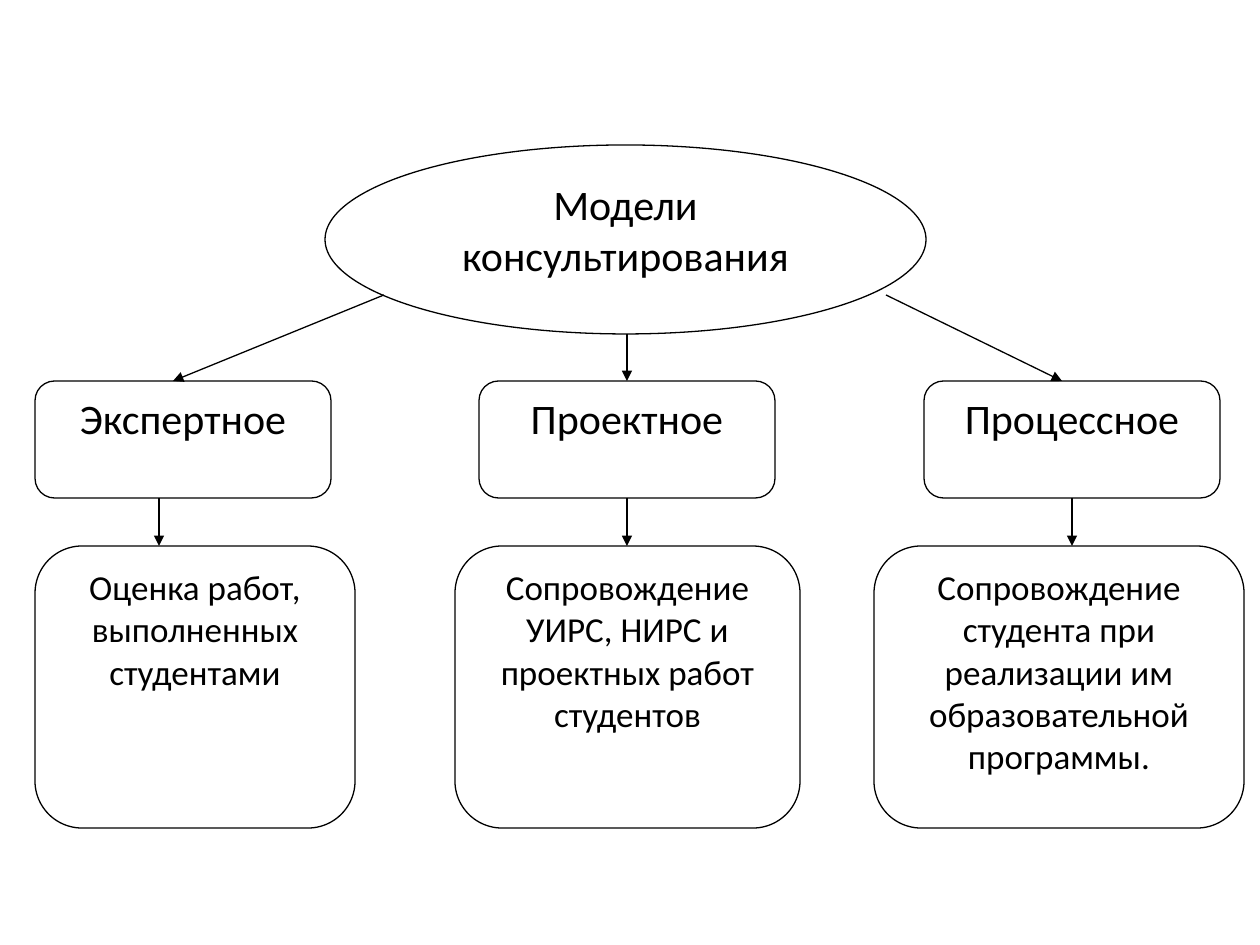
import lxml.etree
import pptx
import pptx.dml.color
import pptx.enum.shapes
import pptx.enum.text
import pptx.oxml.ns
import pptx.util

BLACK = pptx.dml.color.RGBColor(0x00, 0x00, 0x00)
WHITE = pptx.dml.color.RGBColor(0xFF, 0xFF, 0xFF)
ELLIPSE = pptx.enum.shapes.MSO_SHAPE.OVAL
ROUNDED = pptx.enum.shapes.MSO_SHAPE.ROUNDED_RECTANGLE
PX_PER_INCH = 126


def px(length):
    return pptx.util.Emu(round(length * 914400 / PX_PER_INCH))


class Diagram:
    """Draws outlined boxes and arrows in one style on one slide."""

    font_name = "Calibri"
    line_width = pptx.util.Pt(0.75)

    def __init__(self, slide):
        self.slide = slide

    def style_line(self, line):
        line.color.rgb = BLACK
        line.width = self.line_width

    def box(self, kind, left, top, width, height, text, size):
        shape = self.slide.shapes.add_shape(
            kind, px(left), px(top), px(width), px(height))
        shape.shadow.inherit = False
        shape.fill.solid()
        shape.fill.fore_color.rgb = WHITE
        self.style_line(shape.line)
        text_frame = shape.text_frame
        text_frame.word_wrap = True
        text_frame.vertical_anchor = pptx.enum.text.MSO_ANCHOR.TOP
        text_frame.text = text
        for paragraph in text_frame.paragraphs:
            paragraph.alignment = pptx.enum.text.PP_ALIGN.CENTER
            for run in paragraph.runs:
                run.font.name = self.font_name
                run.font.size = pptx.util.Pt(size)
                run.font.color.rgb = BLACK

    def arrow(self, start_x, start_y, end_x, end_y):
        connector = self.slide.shapes.add_connector(
            pptx.enum.shapes.MSO_CONNECTOR.STRAIGHT,
            px(start_x), px(start_y), px(end_x), px(end_y))
        self.style_line(connector.line)
        qn = pptx.oxml.ns.qn
        properties = connector.element.find(qn("p:spPr"))
        lxml.etree.SubElement(
            properties.find(qn("a:ln")), qn("a:tailEnd"), type="triangle")
        lxml.etree.SubElement(properties, qn("a:effectLst"))


def main():
    presentation = pptx.Presentation()
    presentation.slide_width = pptx.util.Inches(10)
    presentation.slide_height = pptx.util.Inches(7.5)
    slide = presentation.slides.add_slide(presentation.slide_layouts[6])
    diagram = Diagram(slide)

    root_top, root_height = 145, 189
    model_top, model_width, model_height = 381, 296, 117
    detail_top, detail_height = 546, 282
    root_bottom = root_top + root_height
    model_bottom = model_top + model_height

    diagram.box(ELLIPSE, 325, root_top, 601, root_height,
                "Модели консультирования", 24)

    # model, its left, detail, its left and width, x of the arrow to it,
    # start of the arrow from the root, x of that arrow's end
    columns = [
        ("Экспертное", 35,
         "Оценка работ,\nвыполненных студентами", 35, 320,
         159, (384, 295), 173),
        ("Проектное", 479,
         "Сопровождение УИРС, НИРС и проектных работ\nстудентов", 455, 345,
         627, (627, root_bottom), 627),
        ("Процессное", 924,
         "Сопровождение студента при реализации им образовательной программы.",
         874, 370, 1072, (886, 295), 1062),
    ]
    for (model, model_left, detail, detail_left, detail_width,
         detail_arrow_x, root_point, root_arrow_x) in columns:
        diagram.box(ROUNDED, model_left, model_top, model_width, model_height,
                    model, 24)
        diagram.box(ROUNDED, detail_left, detail_top, detail_width,
                    detail_height, detail, 20)
        diagram.arrow(*root_point, root_arrow_x, model_top)
        diagram.arrow(detail_arrow_x, model_bottom, detail_arrow_x, detail_top)

    presentation.save("out.pptx")


if __name__ == "__main__":
    main()
